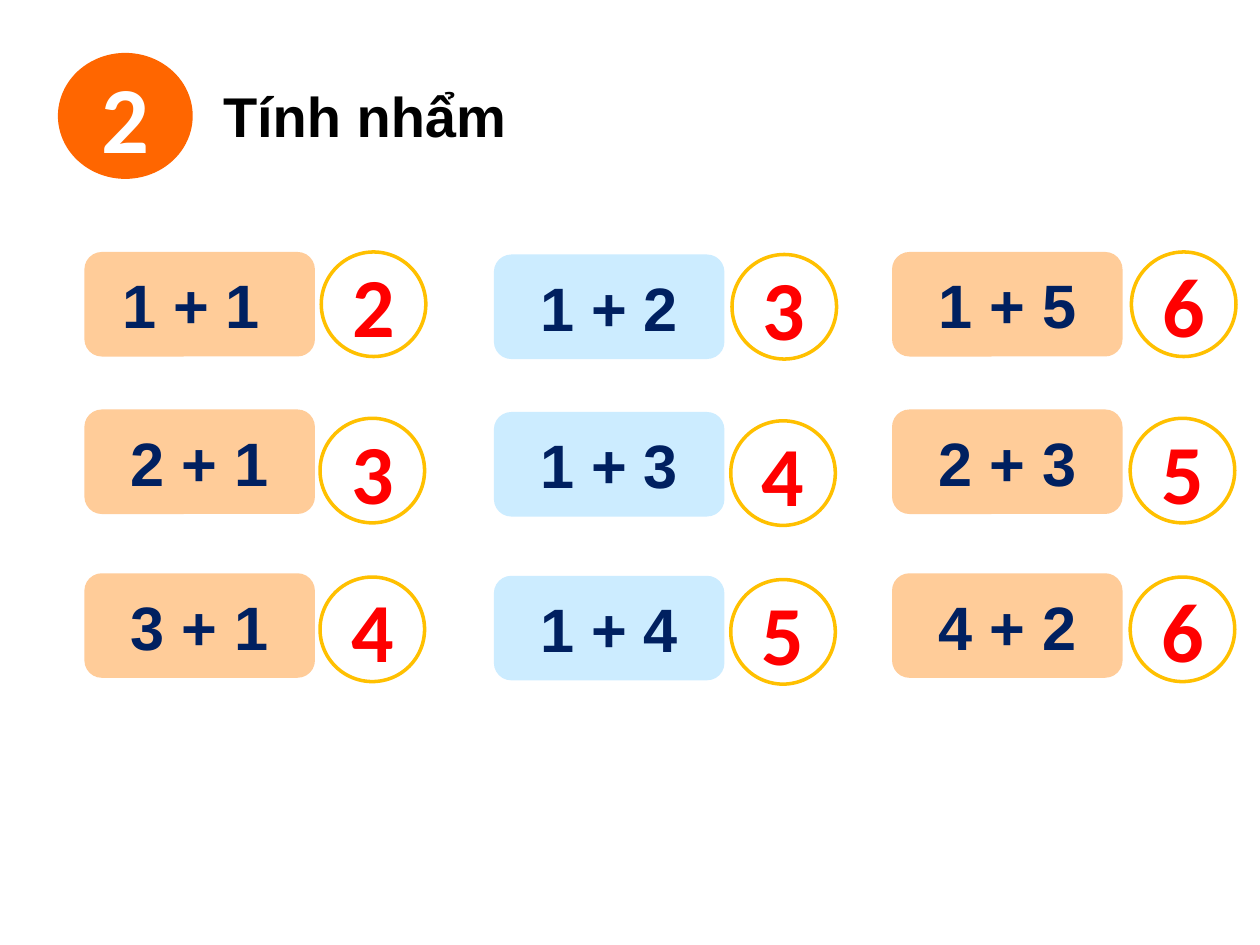
from pptx import Presentation
from pptx.dml.color import RGBColor
from pptx.enum.shapes import MSO_SHAPE
from pptx.enum.text import MSO_ANCHOR, MSO_AUTO_SIZE, PP_ALIGN
from pptx.util import Inches, Pt

ELLIPSE = MSO_SHAPE.OVAL
ROUNDED = MSO_SHAPE.ROUNDED_RECTANGLE
LEFT, CENTER = PP_ALIGN.LEFT, PP_ALIGN.CENTER
TOP, MIDDLE = MSO_ANCHOR.TOP, MSO_ANCHOR.MIDDLE
FIT_SHAPE = MSO_AUTO_SIZE.SHAPE_TO_FIT_TEXT

COLORS = {
    "badge": "FF6600", "white": "FFFFFF", "title": "000000",
    "peach": "FFCC99", "sky": "CCECFF", "sum": "002060",
    "ring": "FFC000", "answer": "FF0000",
}

CARD_WIDTH, CARD_HEIGHT, RING_SIZE = 1.83, 0.83, 0.83
CARD_TOPS = [0, 1.25, 2.55]
RING_TOPS = [0, 1.32, 2.58]
RING_SHIFTS = [0.01, 0, 0]  # the first ring of a column stands slightly right

# left, top, ring left, card colour, (sum, answer) pairs
COLUMNS = [
    (0.67, 2, 2.54, "peach", [("1 + 1 ", "2"), ("2 + 1", "3"), ("3 + 1", "4")]),
    (3.92, 2.02, 5.8, "sky", [("1 + 2", "3"), ("1 + 3", "4"), ("1 + 4", "5")]),
    (7.08, 2, 8.97, "peach", [("1 + 5", "6"), ("2 + 3", "5"), ("4 + 2", "6")]),
]


def color(name):
    return RGBColor.from_string(COLORS[name])


def set_text(shape, text, size, font_name, color_name, align=CENTER, anchor=MIDDLE):
    frame = shape.text_frame
    frame.text = text
    frame.word_wrap = True
    frame.vertical_anchor = anchor
    para = frame.paragraphs[0]
    para.alignment = align
    font = para.runs[0].font
    font.size, font.name, font.bold = Pt(size), font_name, True
    font.color.rgb = color(color_name)


def add_box(page, kind, box, fill=None, line=None):
    shape = page.shapes.add_shape(kind, *(Inches(length) for length in box))
    shape.shadow.inherit = False
    if fill:
        shape.fill.solid()
        shape.fill.fore_color.rgb = color(fill)
    else:
        shape.fill.background()
    if line:
        shape.line.color.rgb = color(line)
        shape.line.width = Pt(2)
    else:
        shape.line.fill.background()
    return shape


def add_heading(page, left, top):
    # Exercise number
    badge = add_box(page, ELLIPSE, (left, top, 1.07, 1), fill="badge")
    set_text(badge, "2", 54, "Calibri", "white")
    # Exercise title
    title = page.shapes.title
    title.left, title.top = Inches(left + 1.21), Inches(top + 0.18)
    title.width, title.height = Inches(2.93), Inches(0.64)
    set_text(title, "Tính nhẩm", 32, "Arial", "title", LEFT, TOP)
    title.text_frame.auto_size = FIT_SHAPE


def add_column(page, left, top, ring_left, fill, exercises):
    rows = zip(exercises, CARD_TOPS, RING_TOPS, RING_SHIFTS)
    for (sum_text, answer), card_top, ring_top, shift in rows:
        card_box = (left, top + card_top, CARD_WIDTH, CARD_HEIGHT)
        card = add_box(page, ROUNDED, card_box, fill=fill)
        set_text(card, sum_text, 35, "Arial", "sum")
        ring_box = (ring_left + shift, top + ring_top, RING_SIZE, RING_SIZE)
        ring = add_box(page, ELLIPSE, ring_box, line="ring")
        set_text(ring, answer, 48, "Calibri", "answer")


def main():
    deck = Presentation()
    deck.slide_width, deck.slide_height = Inches(10), Inches(7.5)
    page = deck.slides.add_slide(deck.slide_layouts.get_by_name("Title Only"))
    add_heading(page, 0.46, 0.42)
    for column in COLUMNS:
        add_column(page, *column)
    deck.save("out.pptx")


if __name__ == "__main__":
    main()
